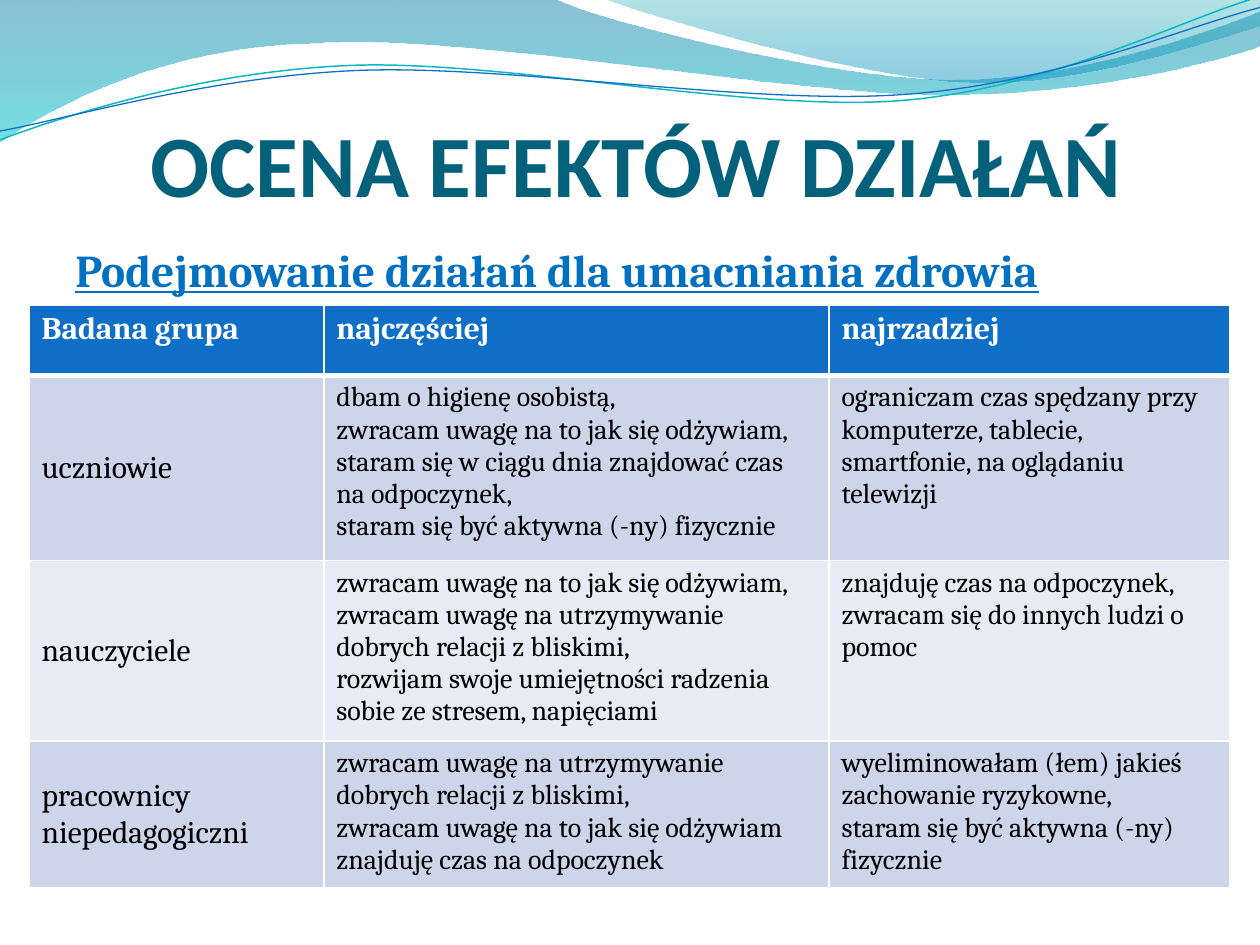
from math import cos, radians, sin
from pptx import Presentation
from pptx.dml.color import RGBColor
from pptx.enum.text import MSO_ANCHOR, MSO_AUTO_SIZE, PP_ALIGN
from pptx.oxml.ns import qn
from pptx.util import Inches, Pt
from lxml.etree import SubElement

COLORS = {
    "title": "04617B", "heading": "0070C0", "header": "0F6FC6",
    "odd": "CCD5EA", "even": "E7EBF5", "white": "FFFFFF", "black": "000000",
    "teal": "0AB8BF", "deep": "0074A1", "cyan": "00C6CF",
    "green": "00A1A9", "blue": "008BBF",
}
TITLE = "OCENA EFEKTÓW DZIAŁAŃ"
HEADING = "Podejmowanie działań dla umacniania zdrowia"
ROWS = [
    (["Badana grupa"], ["najczęściej"], ["najrzadziej"]),
    (["uczniowie"],
     ["dbam o higienę osobistą,",
      "zwracam uwagę na to jak się odżywiam,",
      "staram się w ciągu dnia znajdować czas na odpoczynek,",
      "staram się być aktywna (-ny) fizycznie"],
     ["ograniczam czas spędzany przy komputerze, tablecie, smartfonie, na oglądaniu telewizji"]),
    (["nauczyciele"],
     ["zwracam uwagę na to jak się odżywiam,",
      "zwracam uwagę na utrzymywanie dobrych relacji z bliskimi,",
      "rozwijam swoje umiejętności radzenia sobie ze stresem, napięciami"],
     ["znajduję czas na odpoczynek,",
      "zwracam się do innych ludzi o pomoc"]),
    (["pracownicy niepedagogiczni"],
     ["zwracam uwagę na utrzymywanie dobrych relacji z bliskimi,",
      "zwracam uwagę na to jak się odżywiam",
      "znajduję czas na odpoczynek"],
     ["wyeliminowałam (łem) jakieś zachowanie ryzykowne,",
      "staram się być aktywna (-ny) fizycznie"]),
]
COL_WIDTHS = [2.34, 4.01, 3.18]
ROW_HEIGHTS = [0.56, 1.47, 0.56, 0.56]

WAVES = [
    ([[(0, 0)], [(4.4, -0.01)], [(4.76, 0.17), (6.64, 0.63), (7.58, 0.63)],
      [(8.53, 0.63), (9.58, 0.26), (10, 0.09)], [(10.01, 0.36)],
      [(9.83, 0.44), (8.7, 0.76), (7.46, 0.75)],
      [(6.22, 0.75), (3.82, 0.28), (2.57, 0.34)],
      [(1.29, 0.36), (0.46, 0.83), (-0.01, 1.13)], [(0, 0)]],
     [("deep", 45), ("cyan", 55)]),
    ([[(4.79, -0.01)], [(5.09, 0.11), (6.82, 0.62), (7.69, 0.65)],
      [(8.56, 0.69), (9.61, 0.32), (10, 0.21)], [(10, 0)], [(4.79, -0.01)]],
     [("green", 30), ("blue", 45)]),
]
STROKES = [
    ([[(0, 1.11)], [(0.48, 0.93), (1.58, 0.57), (2.77, 0.52)],
      [(3.95, 0.47), (5.93, 0.89), (7.13, 0.8)],
      [(8.33, 0.71), (9.38, 0.15), (9.98, -0.02)]],
     (4.99, 0.58), "teal", 0.85),
    ([[(0, 1.04)], [(0.47, 0.96), (1.64, 0.61), (2.83, 0.56)],
      [(4.03, 0.51), (5.97, 0.84), (7.17, 0.75)],
      [(8.36, 0.67), (9.41, 0.21), (10, 0.06)]],
     (5, 0.59), "header", 0.75),
]
TILT = 2.7


def rgb(name):
    return RGBColor.from_string(COLORS[name])


def turn(point, center, degrees):
    a = radians(degrees)
    dx, dy = point[0] - center[0], point[1] - center[1]
    return center[0] + dx * cos(a) - dy * sin(a), center[1] + dx * sin(a) + dy * cos(a)


def add_path(s, steps, close):
    steps = [[(Inches(x), Inches(y)) for x, y in step] for step in steps]
    ends = [step[-1] for step in steps]
    fb = s.shapes.build_freeform(*ends[0])
    fb.add_line_segments(ends[1:], close=close)
    sp = fb.convert_to_shape()
    sp.shadow.inherit = False
    segments = list(sp._element.iter(qn("a:lnTo")))
    for segment, step in zip(segments, steps[1:]):
        if len(step) == 3:
            curve = segment.getparent().makeelement(qn("a:cubicBezTo"))
            for x, y in step:
                SubElement(curve, qn("a:pt"), x=str(x - sp.left), y=str(y - sp.top))
            segment.getparent().replace(segment, curve)
    return sp


def add_run(p, text, size, color, bold=False, font="Cambria"):
    r = p.add_run()
    r.text = text
    r.font.name = font
    r.font.size = Pt(size)
    r.font.bold = bold
    r.font.color.rgb = rgb(color)
    return r


def set_borders(cell, widths):
    tcPr = cell._tc.get_or_add_tcPr()
    for side, width in widths.items():
        ln = SubElement(tcPr, qn(f"a:ln{side}"), w=str(Pt(width)))
        fill = SubElement(ln, qn("a:solidFill"))
        SubElement(fill, qn("a:srgbClr"), val=COLORS["white"])


def add_waves(s):
    for steps, stops in WAVES:
        sp = add_path(s, steps, True)
        sp.line.fill.background()
        sp.fill.gradient()
        sp.fill.gradient_angle = 270
        for stop, (color, alpha) in zip(sp.fill.gradient_stops, stops):
            stop.color.rgb = rgb(color)
            clr = stop._gs.find(qn("a:srgbClr"))
            SubElement(clr, qn("a:alpha"), val=str(alpha * 1000))
    for steps, center, color, width in STROKES:
        level = [[turn(point, center, TILT) for point in step] for step in steps]
        sp = add_path(s, level, False)
        sp.rotation = 360 - TILT
        sp.fill.background()
        sp.line.color.rgb = rgb(color)
        sp.line.width = Pt(width)


def add_titles(s):
    title = s.shapes.title
    title.left, title.top, title.width, title.height = map(Inches, (0.55, 0.78, 9, 0.93))
    tf = title.text_frame
    tf.auto_size = MSO_AUTO_SIZE.NONE
    tf.vertical_anchor = MSO_ANCHOR.BOTTOM
    tf.margin_left = tf.margin_right = tf.margin_bottom = 0
    tf.margin_top = Inches(0.05)
    p = tf.paragraphs[0]
    p.alignment = PP_ALIGN.CENTER
    add_run(p, TITLE, 50, "title", True, "Calibri")

    tf = s.shapes.add_textbox(*map(Inches, (0.5, 1.87, 9, 5.04))).text_frame
    tf.word_wrap = True
    p = tf.paragraphs[0]
    p.space_before = Pt(5)
    pPr = p._p.get_or_add_pPr()
    pPr.set("marL", str(Inches(0.3)))
    pPr.set("indent", str(Inches(-0.3)))
    add_run(p, HEADING, 26, "heading", True).font.underline = True


def add_results(s):
    frame = s.shapes.add_table(len(ROWS), len(COL_WIDTHS), *map(Inches, (0.23, 2.42, 9.53, 4.63)))
    table = frame.table
    for col, width in zip(table.columns, COL_WIDTHS):
        col.width = Inches(width)
    for i, row in enumerate(ROWS):
        table.rows[i].height = Inches(ROW_HEIGHTS[i])
        for j, lines in enumerate(row):
            cell = table.cell(i, j)
            set_borders(cell, {"L": 1, "R": 1, "T": 3 if i == 1 else 1, "B": 3 if i == 0 else 1})
            cell.fill.solid()
            cell.fill.fore_color.rgb = rgb("header" if i == 0 else "odd" if i % 2 else "even")
            if i and j == 0:
                cell.vertical_anchor = MSO_ANCHOR.MIDDLE
            tf = cell.text_frame
            for k, line in enumerate(lines):
                p = tf.add_paragraph() if k else tf.paragraphs[0]
                add_run(p, line, 16 if i and j else 18, "black" if i else "white", i == 0)
    frame.height = Inches(4.63)


def main():
    prs = Presentation()
    prs.slide_width, prs.slide_height = Inches(10), Inches(7.5)
    s = prs.slides.add_slide(prs.slide_layouts[5])
    add_waves(s)
    add_titles(s)
    add_results(s)
    prs.save("out.pptx")


if __name__ == "__main__":
    main()
